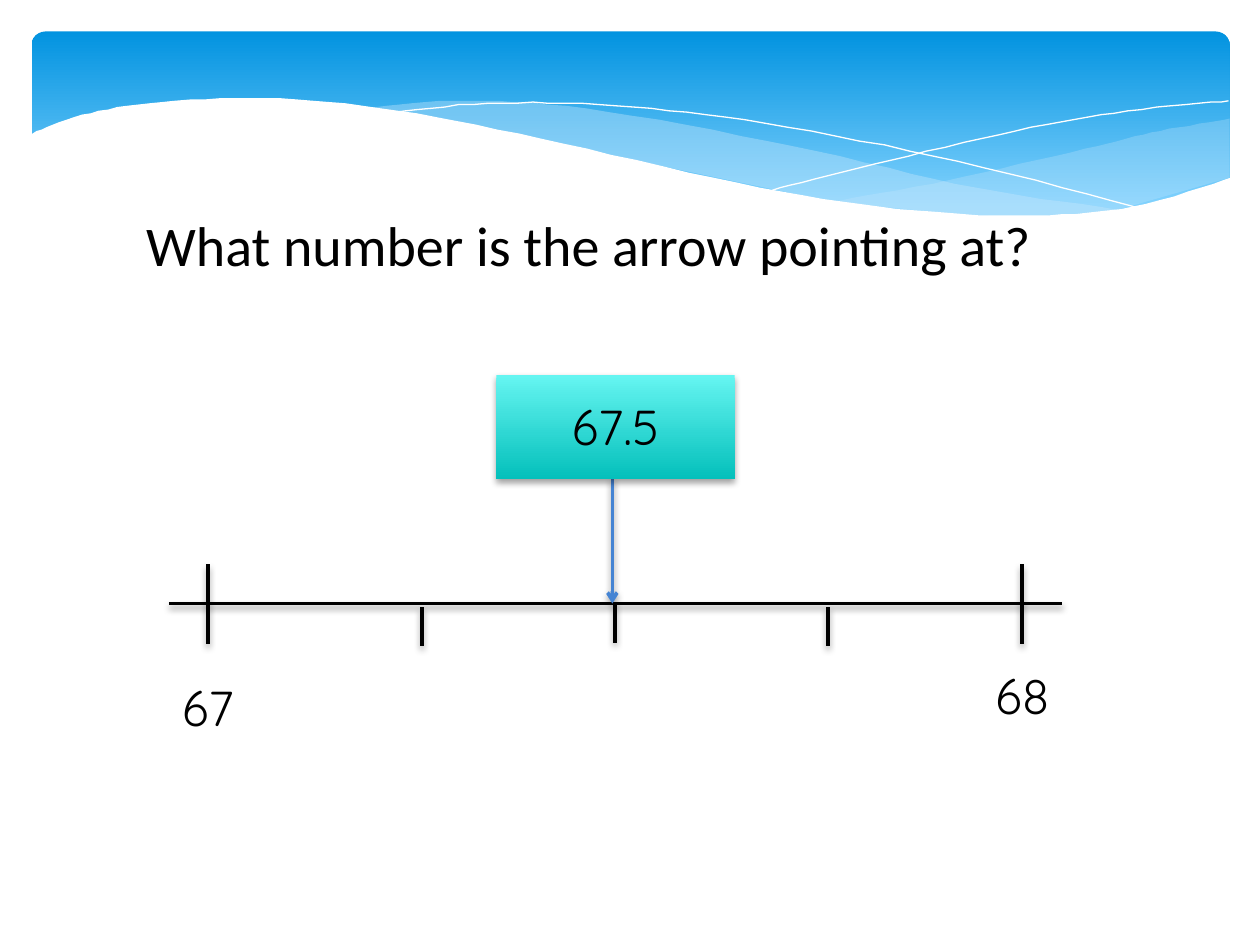
from lxml.etree import SubElement
from pptx import Presentation
from pptx.dml.color import RGBColor
from pptx.enum.shapes import MSO_CONNECTOR as CONNECTOR, MSO_SHAPE as SHAPE
from pptx.enum.text import MSO_ANCHOR as ANCHOR, MSO_AUTO_SIZE as AUTO_SIZE, PP_ALIGN as ALIGN
from pptx.oxml.ns import qn
from pptx.util import Pt

PX = 9144  # 100 px to the inch
STEPS = 8  # straight pieces between two knots of a wave
COLORS = {
    "black": "000000", "white": "FFFFFF", "pale": "C6E7FC", "arrow": "4584D3",
    "sky_top": "0293E0", "sky_bottom": "83D3FE",
    "box_top": "65F5F1", "box_bottom": "04C0BB",
}


def smooth(knots):
    """Points of a Catmull-Rom curve through the knots."""
    padded = [knots[0], *knots, knots[-1]]
    points = [knots[0]]
    for a, b, c, d in zip(padded, padded[1:], padded[2:], padded[3:]):
        for step in range(1, STEPS + 1):
            t = step / STEPS
            points.append(tuple(
                (2 * q + (r - p) * t + (2 * p - 5 * q + 4 * r - s) * t ** 2
                 + (3 * q - p - 3 * r + s) * t ** 3) / 2
                for p, q, r, s in zip(a, b, c, d)))
    return points


def write_text(shape, text, size, font, align):
    frame = shape.text_frame
    frame.word_wrap = True
    frame.auto_size = AUTO_SIZE.SHAPE_TO_FIT_TEXT
    frame.vertical_anchor = ANCHOR.TOP
    paragraph = frame.paragraphs[0]
    paragraph.alignment = align
    run = paragraph.add_run()
    run.text = text
    run.font.size = Pt(size)
    run.font.name = font
    run.font.color.rgb = RGBColor.from_string(COLORS["black"])


presentation = Presentation()
presentation.slide_width = 1000 * PX
presentation.slide_height = 750 * PX
slide = presentation.slides.add_slide(presentation.slide_layouts[5])
shapes = slide.shapes

# Gradient panels: the banner and the answer box
panels = [
    (SHAPE.ROUNDED_RECTANGLE, (25, 25, 951, 156), "sky_top", "sky_bottom", 0.9),
    (SHAPE.RECTANGLE, (394, 298, 189, 82), "box_top", "box_bottom", 1),
]
for kind, box, top_color, bottom_color, end in panels:
    panel = shapes.add_shape(kind, *(value * PX for value in box))
    panel.shadow.inherit = False
    panel.fill.gradient()
    panel.fill.gradient_angle = 270
    for stop, color, position in zip(panel.fill.gradient_stops, (top_color, bottom_color), (0, end)):
        stop.color.rgb = RGBColor.from_string(COLORS[color])
        stop.position = position
    panel.line.fill.background()
    if kind == SHAPE.ROUNDED_RECTANGLE:
        panel.adjustments[0] = 0.071
answer_box = panel

# Waves: knots of the curve, corners below it, fill (None for a line), opacity in percent
waves = [
    ([(661, 160), (753, 143), (861, 118), (921, 104), (976, 94)],
     [(976, 141), (889, 166), (835, 172), (769, 171)], "pale", 29),
    ([(286, 86), (361, 80), (465, 86), (629, 116), (775, 149), (893, 167)],
     [(807, 173), (748, 170), (660, 160), (449, 116)], "pale", 40),
    ([(309, 90), (387, 82), (489, 84), (608, 98), (760, 128), (907, 166)], [], None, 100),
    ([(613, 151), (695, 130), (806, 104), (895, 88), (975, 80)], [], None, 100),
    ([(23, 107), (59, 93), (119, 82), (211, 78), (316, 88), (447, 114), (603, 149),
      (726, 167), (823, 171), (899, 164), (977, 141)],
     [(977, 224), (23, 224)], "white", 100),
]
for knots, corners, color, opacity in waves:
    builder = shapes.build_freeform(*knots[0], scale=PX)
    builder.add_line_segments(smooth(knots)[1:] + corners, close=color is not None)
    wave = builder.convert_to_shape()
    wave.shadow.inherit = False
    if color is None:
        wave.fill.background()
        wave.line.color.rgb = RGBColor.from_string(COLORS["white"])
        wave.line.width = Pt(0)
        continue
    wave.line.fill.background()
    wave.fill.solid()
    wave.fill.fore_color.rgb = RGBColor.from_string(COLORS[color])
    if opacity < 100:
        fill_color = wave._element.spPr.find(qn("a:solidFill"))[0]
        SubElement(fill_color, qn("a:alpha"), val=str(opacity * 1000))

# Title, raised above the waves
title = shapes.title
title.left, title.top, title.width, title.height = (value * PX for value in (106, 162, 764, 64))
write_text(title, "What number is the arrow pointing at?", 32, "Calibri", ALIGN.LEFT)
shapes._spTree.append(title._element)

# Number line, its ticks and the arrow
lines = [(134, 479, 843, 479, "black")]
lines += [(x, 448, x, 511, "black") for x in (165, 811)]
lines += [(x, top, x, top + 31, "black") for x, top in ((335, 482), (488, 479), (657, 482))]
lines += [(486, 379, 486, 479, "arrow")]
shadowed = [answer_box]
for *ends, color in lines:
    line = shapes.add_connector(CONNECTOR.STRAIGHT, *(value * PX for value in ends))
    line.line.color.rgb = RGBColor.from_string(COLORS[color])
    line.line.width = Pt(2)
    if color == "arrow":
        SubElement(line._element.spPr.find(qn("a:ln")), qn("a:tailEnd"), type="arrow")
    SubElement(line._element.spPr, qn("a:effectLst"))
    shadowed.append(line)
shapes._spTree.append(answer_box._element)

# Soft shadow under the answer box and the lines
for shape in shadowed:
    effects = shape._element.spPr.find(qn("a:effectLst"))
    shadow = SubElement(effects, qn("a:outerShdw"), blurRad=str(Pt(4)), dist=str(Pt(2)),
                        dir="5400000", rotWithShape="0")
    shadow_color = SubElement(shadow, qn("a:srgbClr"), val=COLORS["black"])
    SubElement(shadow_color, qn("a:alpha"), val="38000")

# Numbers
numbers = [("67", 106, 533, 118), ("68", 778, 523, 67), ("67.5", 414, 310, 149)]
for text, left, top, width in numbers:
    label = shapes.add_textbox(left * PX, top * PX, width * PX, 57 * PX)
    write_text(label, text, 28, "Quicksand", ALIGN.CENTER)

presentation.save("out.pptx")
